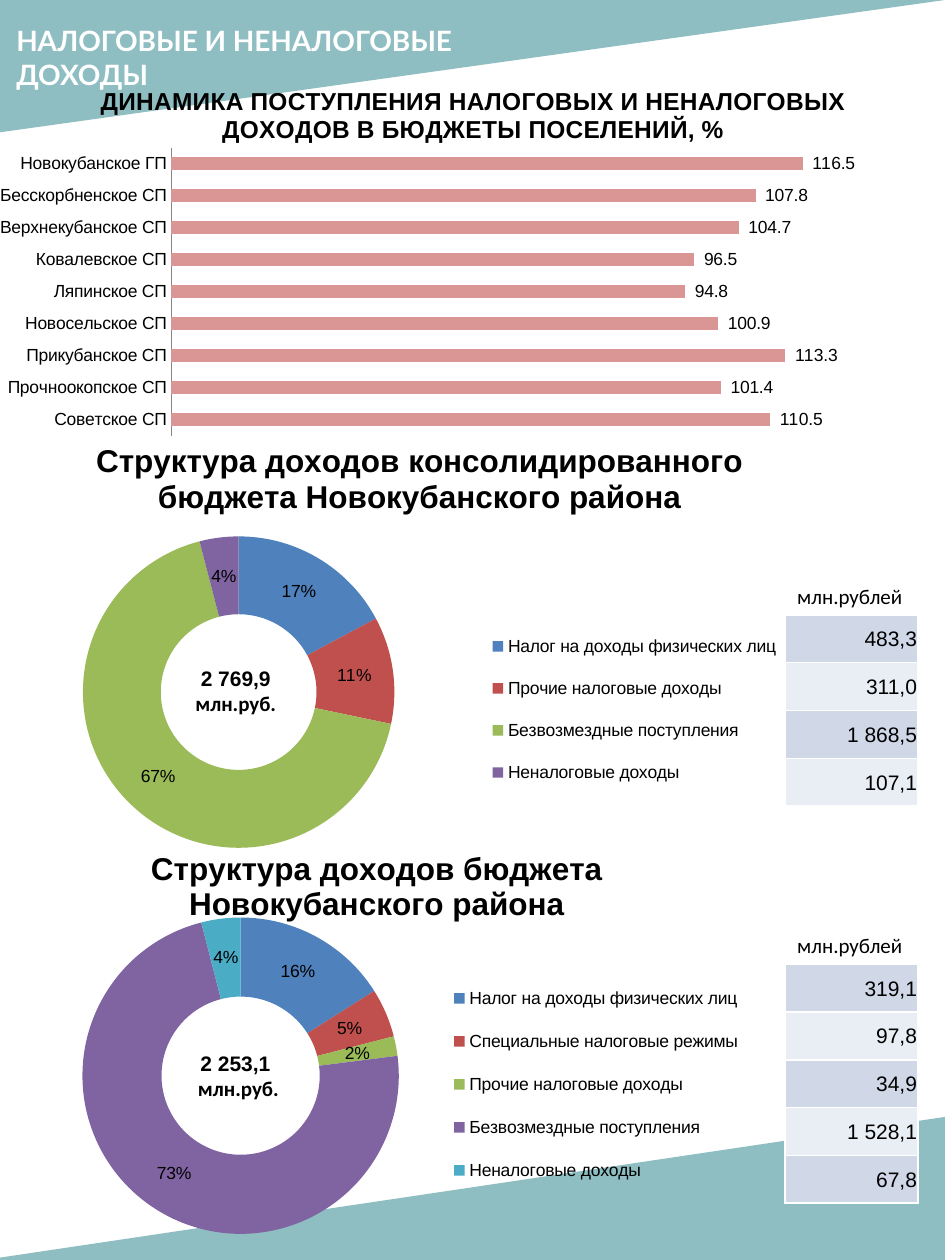
from lxml import etree
from pptx import Presentation
from pptx import util as u
from pptx.chart.data import CategoryChartData
from pptx.dml.color import RGBColor
from pptx.enum import chart as charts, shapes, text
from pptx.oxml import parse_xml
from pptx.oxml.ns import nsdecls, qn

TEAL = "519AA0"
SLICES = ["4F81BD", "C0504D", "9BBB59", "8064A2", "4BACC6"]
BANDS = ["D0D8E8", "E9EDF4"]
TABLE_LEFT, TABLE_WIDTH, ROW_HEIGHT = 448.5, 76.2, 27.3


def color(value):
    return RGBColor.from_string(value)


def pts(*lengths):
    return [u.Pt(length) for length in lengths]


def style(font, size=12, name="Arial", hue="000000", bold=False):
    font.size, font.name, font.bold = u.Pt(size), name, bold
    font.color.rgb = color(hue)


def add_triangle(page, frame, flip):
    triangle = page.shapes.add_shape(shapes.MSO_SHAPE.RIGHT_TRIANGLE, *pts(*frame))
    triangle.shadow.inherit = False
    triangle.rotation = 180
    triangle._element.spPr.find(qn("a:xfrm")).set(flip, "1")
    triangle.fill.solid()
    triangle.fill.fore_color.rgb = color(TEAL)
    tint = triangle._element.spPr.find(f"{qn('a:solidFill')}/{qn('a:srgbClr')}")
    etree.SubElement(tint, qn("a:alpha"), val="64000")
    triangle.line.fill.background()


def add_text(page, frame, lines, align=None, **fmt):
    """Each line is a list of (wording, font name) spans."""
    box = page.shapes.add_textbox(*pts(*frame))
    body = box.text_frame
    body.word_wrap = True
    body.auto_size = text.MSO_AUTO_SIZE.SHAPE_TO_FIT_TEXT
    for index, line in enumerate(lines):
        para = body.paragraphs[0] if index == 0 else body.add_paragraph()
        para.alignment = align
        for words, name in line:
            span = para.add_run()
            span.text = words
            style(span.font, name=name, **fmt)


def add_amounts(page, top, amounts):
    """Unit caption with a one-column table below it."""
    add_text(page, (TABLE_LEFT, top - 21.6, 80, 21.6), [[("млн.рублей", "Calibri")]])
    frame = pts(TABLE_LEFT, top, TABLE_WIDTH, ROW_HEIGHT * len(amounts))
    table = page.shapes.add_table(len(amounts), 1, *frame).table
    table.first_row = table.horz_banding = False
    for index, amount in enumerate(amounts):
        table.rows[index].height = u.Pt(ROW_HEIGHT)
        cell = table.cell(index, 0)
        cell.margin_left = cell.margin_right = cell.margin_top = u.Pt(0.7)
        cell.margin_bottom = 0
        cell.vertical_anchor = text.MSO_ANCHOR.MIDDLE
        cell.fill.solid()
        cell.fill.fore_color.rgb = color(BANDS[index % 2])
        para = cell.text_frame.paragraphs[0]
        para.alignment = text.PP_ALIGN.RIGHT
        span = para.add_run()
        span.text = amount
        style(span.font)
        for place, side in enumerate(("lnL", "lnR", "lnT", "lnB")):
            border = parse_xml(
                f'<a:{side} {nsdecls("a")} w="12700"><a:solidFill>'
                f'<a:srgbClr val="FFFFFF"/></a:solidFill></a:{side}>')
            cell._tc.get_or_add_tcPr().insert(place, border)


def set_layout(element, place, area, inner=False):
    """Fix a chart part at fractions of the chart: x, y, width, height."""
    for old in element.findall(qn("c:layout")):
        element.remove(old)
    target = '<c:layoutTarget val="inner"/>' if inner else ""
    modes = '<c:xMode val="edge"/><c:yMode val="edge"/>'
    sizes = "".join(f'<c:{key} val="{value}"/>' for key, value in zip("xywh", area))
    element.insert(place, parse_xml(
        f'<c:layout {nsdecls("c")}><c:manualLayout>{target}{modes}{sizes}'
        '</c:manualLayout></c:layout>'))


def add_chart(page, kind, frame, title, size, values, area, number_format):
    data = CategoryChartData()
    data.categories = list(values)
    data.add_series("Series 1", list(values.values()))
    chart = page.shapes.add_chart(kind, *pts(*frame), data).chart
    style(chart.font, 10)
    chart.has_title = True
    chart.has_legend = False
    para = chart.chart_title.text_frame.paragraphs[0]
    span = para.add_run()
    span.text = title
    style(span.font, size, bold=True)
    set_layout(chart._chartSpace.chart.plotArea, 0, area, inner=True)
    plot = chart.plots[0]
    plot.has_data_labels = True
    labels = plot.data_labels
    labels.show_value = True
    labels.show_percentage = False
    labels.number_format = number_format
    labels.number_format_is_linked = False
    style(labels.font, 10)
    return chart


def add_bars(page, frame, title, values, area):
    chart = add_chart(page, charts.XL_CHART_TYPE.BAR_CLUSTERED, frame, title, 14,
                      values, area, "#\\ ##0.0")
    plot = chart.plots[0]
    plot.vary_by_categories = False
    plot.gap_width, plot.overlap = 150, -25
    plot.data_labels.position = charts.XL_LABEL_POSITION.OUTSIDE_END
    bars = plot.series[0].format.fill
    bars.solid()
    bars.fore_color.rgb = color("D99694")
    names, scale = chart.category_axis, chart.value_axis
    names.reverse_order = True
    names.major_tick_mark = charts.XL_TICK_MARK.NONE
    names.format.line.color.rgb = color("868686")
    scale.visible = scale.has_major_gridlines = False
    scale.minimum_scale, scale.maximum_scale = 0, 141


def add_ring(page, frame, title, values, area, legend_area):
    chart = add_chart(page, charts.XL_CHART_TYPE.DOUGHNUT, frame, title, 18,
                      values, area, '0"%"')
    plot = chart.plots[0]
    plot._element.find(qn("c:holeSize")).set("val", "50")
    for index in range(len(values)):
        fill = plot.series[0].points[index].format.fill
        fill.solid()
        fill.fore_color.rgb = color(SLICES[index])
    chart.has_legend = True
    chart.legend.position = charts.XL_LEGEND_POSITION.RIGHT
    chart.legend.include_in_layout = False
    style(chart.legend.font, 10)
    set_layout(chart.legend._element, 1, legend_area)


def main():
    deck = Presentation()
    deck.slide_width, deck.slide_height = pts(540, 720)
    page = deck.slides.add_slide(deck.slide_layouts[6])

    # Corner bands and heading
    add_triangle(page, (0, 0, 540, 75.6), "flipH")
    add_triangle(page, (-9.4, 638, 550.8, 82), "flipV")
    add_text(page, (2.2, 10, 324.7, 46), [[("НАЛОГОВЫЕ И НЕНАЛОГОВЫЕ ДОХОДЫ", "Lato")]],
             size=16, hue="FFFFFF", bold=True)

    # Amount tables
    add_amounts(page, 351.4, ["483,3", "311,0", "1 868,5", "107,1"])
    add_amounts(page, 551, ["319,1", "97,8", "34,9", "1 528,1", "67,8"])

    # Growth by settlement
    add_bars(page, (0, 38.2, 540, 219.6),
             "ДИНАМИКА ПОСТУПЛЕНИЯ НАЛОГОВЫХ И НЕНАЛОГОВЫХ ДОХОДОВ В БЮДЖЕТЫ ПОСЕЛЕНИЙ, %",
             {"Новокубанское ГП": 116.5, "Бесскорбненское СП": 107.8,
              "Верхнекубанское СП": 104.7, "Ковалевское СП": 96.5,
              "Ляпинское СП": 94.8, "Новосельское СП": 100.9,
              "Прикубанское СП": 113.3, "Прочноокопское СП": 101.4,
              "Советское СП": 110.5},
             (0.18, 0.21, 0.81, 0.75))

    # Income structure rings with their totals
    bold_center = {"align": text.PP_ALIGN.CENTER, "bold": True}
    add_ring(page, (-0.7, 239.5, 481, 247.7),
             "Структура доходов консолидированного бюджета Новокубанского района",
             {"Налог на доходы физических лиц": 17, "Прочие налоговые доходы": 11,
              "Безвозмездные поступления": 67, "Неналоговые доходы": 4},
             (0.1, 0.27, 0.37, 0.72), (0.57, 0.45, 0.37, 0.44))
    add_text(page, (103, 376.6, 63.4, 36),
             [[("2 769,9", "Arial")], [("млн.руб.", "Calibri")]], **bold_center)
    add_ring(page, (-0.7, 472.3, 432, 247.7),
             "Структура доходов бюджета Новокубанского района",
             {"Налог на доходы физических лиц": 16, "Специальные налоговые режимы": 5,
              "Прочие налоговые доходы": 2, "Безвозмездные поступления": 73,
              "Неналоговые доходы": 4},
             (0.11, 0.21, 0.42, 0.73), (0.59, 0.32, 0.4, 0.55))
    add_text(page, (102.2, 596.9, 64.8, 36),
             [[("2 253,1", "Arial")], [(" ", "Arial"), ("млн.руб.", "Calibri")]],
             **bold_center)

    deck.save("out.pptx")


if __name__ == "__main__":
    main()
